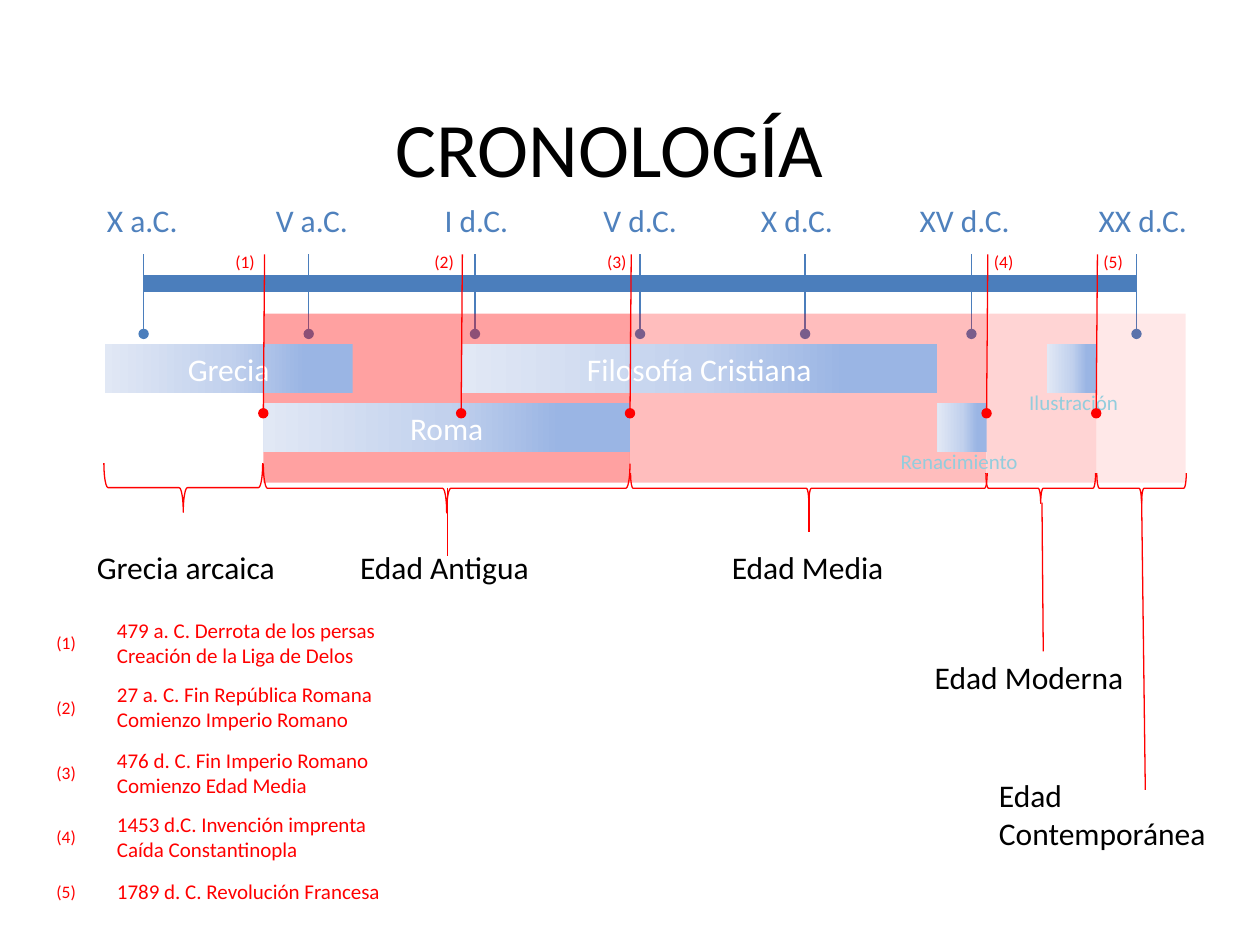
from copy import deepcopy
from pptx import Presentation
from pptx.dml.color import RGBColor as RGB
from pptx.enum.shapes import MSO_CONNECTOR as CONN, MSO_SHAPE as SHAPE
from pptx.enum.text import MSO_ANCHOR as ANCHOR, MSO_AUTO_SIZE as FIT, PP_ALIGN as ALIGN
from pptx.oxml.ns import qn
from pptx.util import Pt
from lxml.etree import SubElement

PX = 9144  # 100 px to the inch
FONT = "Calibri"
HUES = {
    "axis": "4B7EBC", "date": "4F81BD", "red": "FF0000", "ink": "000000",
    "note": "93CDDD", "white": "FFFFFF",
    "deep": "9AB5E4", "mid": "C2D1ED", "pale": "E1E8F5",
}


def hue(name):
    return RGB.from_string(HUES[name])


prs = Presentation()
prs.slide_width, prs.slide_height = 1000 * PX, 750 * PX
slide = prs.slides.add_slide(prs.slide_layouts[5])
shapes = slide.shapes


def label(text, x, y, w, h, size, color, wrap=False):
    box = shapes.add_textbox(x * PX, y * PX, w * PX, h * PX)
    frame = box.text_frame
    frame.text = text
    frame.word_wrap = wrap
    frame.auto_size = FIT.SHAPE_TO_FIT_TEXT
    for para in frame.paragraphs:
        font = para.runs[0].font
        font.name, font.size, font.color.rgb = FONT, Pt(size), hue(color)


def rule(x1, y1, x2, y2, color, width=0.75, dot=False):
    """Draw a straight line, with a round dot at its end if asked."""
    line = shapes.add_connector(CONN.STRAIGHT, x1 * PX, y1 * PX, x2 * PX, y2 * PX)
    line.line.color.rgb = hue(color)
    line.line.width = Pt(width)
    props = line._element.spPr
    if dot:
        SubElement(props.find(qn("a:ln")), qn("a:tailEnd"), type="oval")
    SubElement(props, qn("a:effectLst"))


# Title
title = shapes.title
title.left, title.top, title.width, title.height = 59 * PX, 36 * PX, 850 * PX, 161 * PX
title.text_frame.text = "CRONOLOGÍA"
title.text_frame.vertical_anchor = ANCHOR.MIDDLE
para = title.text_frame.paragraphs[0]
para.alignment = ALIGN.CENTER
font = para.runs[0].font
font.name, font.size, font.color.rgb = FONT, Pt(44), hue("ink")

# Time axis with evenly spaced ticks
start, end = 114, 902
rule(start, 225, end, 225, "axis", 10)
dates = [
    ("X a.C.", 75, 77), ("V a.C.", 209, 78), ("I d.C.", 343, 71), ("V d.C.", 469, 79),
    ("X d.C.", 594, 78), ("XV d.C.", 720, 92), ("XX d.C.", 862, 91),
]
for i, (text, x, w) in enumerate(dates):
    tick = start + round(i * (end - start) / (len(dates) - 1))
    rule(tick, 202, tick, 265, "axis", dot=True)
    label(text, x, 155, w, 40, 18, "date")

# Braces under the ages, each between two edges
edges = [83, 209, 500, 783, 870, 941]
mid = 387
for left, right, deep in zip(edges, edges[1:], [39, 39, 24, 24, 24]):
    span = right - left
    brace = shapes.add_shape(
        SHAPE.LEFT_BRACE, round((left + right - deep) / 2) * PX,
        round(mid - span / 2) * PX, deep * PX, span * PX)
    brace.rotation = 270
    brace.shadow.inherit = False
    brace.fill.background()
    brace.line.color.rgb = hue("red")
    brace.line.width = Pt(0.75)

for stem in [(355, 387, 355, 441), (642, 391, 642, 422),
             (827, 399, 828, 517), (906, 391, 909, 627)]:
    rule(*stem, "red")

ages = [
    ("Grecia arcaica", 67, 430, 163, 40, False),
    ("Edad Antigua", 276, 430, 156, 40, False),
    ("Edad Media", 571, 430, 142, 40, False),
    ("Edad Moderna", 732, 517, 172, 40, False),
    ("Edad Contemporánea", 783, 611, 201, 71, True),
]
for text, x, y, w, h, wrap in ages:
    label(text, x, y, w, h, 18, "ink", wrap)

# Translucent bands behind the ages
for left, right, alpha in zip(edges[1:], edges[2:], [37, 26, 17, 9]):
    band = shapes.add_shape(SHAPE.RECTANGLE, left * PX, 249 * PX, (right - left) * PX, 134 * PX)
    band.shadow.inherit = False
    band.line.fill.background()
    band.fill.solid()
    band.fill.fore_color.rgb = hue("red")
    tint = band._element.spPr.find(qn("a:solidFill"))[0]
    SubElement(tint, qn("a:alpha"), val=str(alpha * 1000))

# Periods of thought
bars = [
    ("Grecia", 83, 273, 197), ("Roma", 209, 320, 291),
    ("Filosofía Cristiana", 366, 273, 378), ("", 744, 320, 39), ("", 831, 273, 39),
]
for text, x, y, w in bars:
    bar = shapes.add_shape(SHAPE.RECTANGLE, x * PX, y * PX, w * PX, 39 * PX)
    bar.shadow.inherit = False
    bar.line.fill.background()
    bar.fill.gradient()
    bar.fill.gradient_angle = 180
    stops = bar._element.spPr.find(qn("a:gradFill")).find(qn("a:gsLst"))
    stops.append(deepcopy(stops[-1]))
    for stop, (pos, color) in zip(bar.fill.gradient_stops,
                                  [(0.19, "deep"), (0.5, "mid"), (1, "pale")]):
        stop.position = pos
        stop.color.rgb = hue(color)
    if text:
        frame = bar.text_frame
        frame.text = text
        frame.vertical_anchor = ANCHOR.MIDDLE
        para = frame.paragraphs[0]
        para.alignment = ALIGN.CENTER
        font = para.runs[0].font
        font.name, font.size, font.color.rgb = FONT, Pt(18), hue("white")

label("Renacimiento", 705, 351, 114, 30, 12, "note")
label("Ilustración", 807, 304, 91, 30, 12, "note", True)

# Numbered turning points and their key
events = [
    (209, 177, 485, "479 a. C. Derrota de los persas\nCreación de la Liga de Delos", 228),
    (366, 335, 536, "27 a. C. Fin República Romana\nComienzo Imperio Romano", 225),
    (500, 472, 588, "476 d. C. Fin Imperio Romano\nComienzo Edad Media", 222),
    (783, 779, 639, "1453 d.C. Invención imprenta\nCaída Constantinopla", 220),
    (870, 866, 692, "1789 d. C. Revolución Francesa", 231),
]
for i, (x, num, y, text, w) in enumerate(events, 1):
    two = "\n" in text
    rule(x + 1, 202, x, 328, "red", dot=True)
    label(f"({i})", num, 194, 36, 27, 10, "red")
    label(f"({i})", 35, y + (12 if two else 2), 36, 27, 10, "red")
    label(text, 83, y, w, 50 if two else 30, 12, "red")

prs.save("out.pptx")
